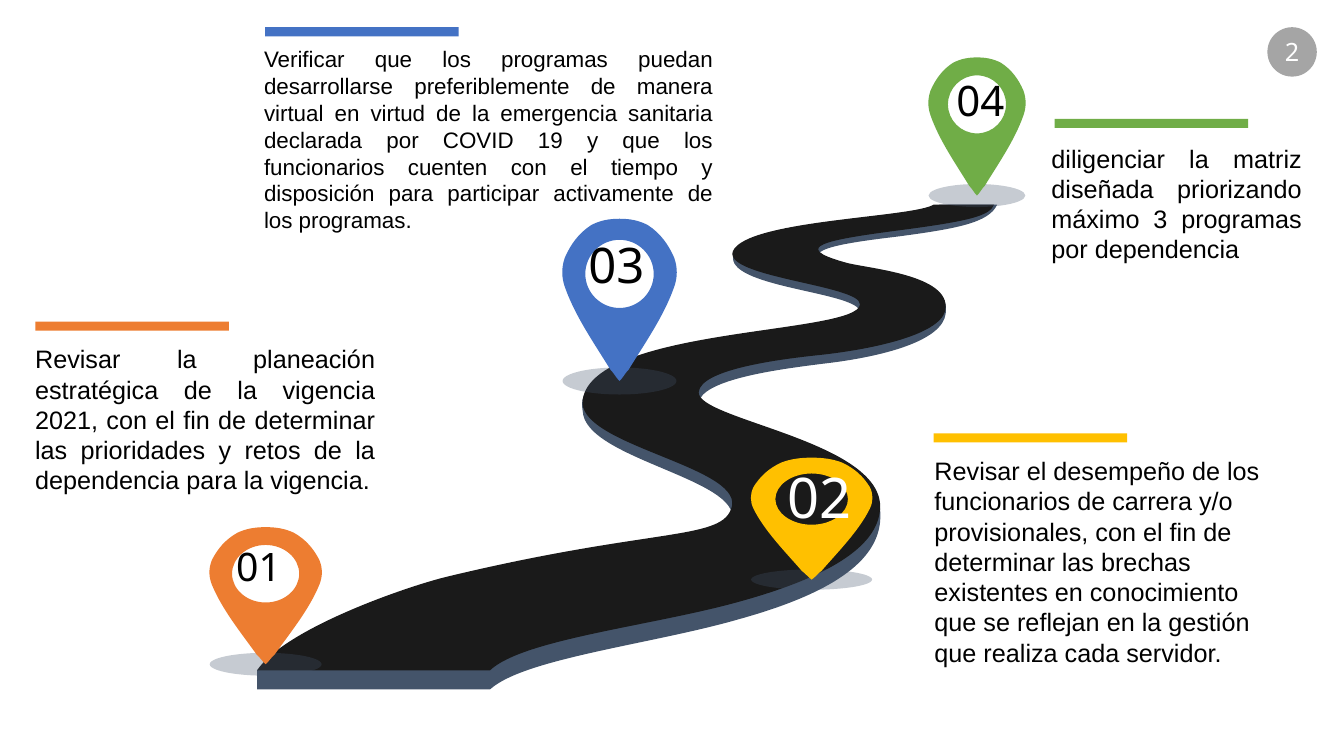
from dataclasses import dataclass

from lxml import etree
from pptx import Presentation
from pptx.dml.color import RGBColor
from pptx.enum.shapes import MSO_SHAPE
from pptx.enum.text import MSO_ANCHOR, MSO_AUTO_SIZE, PP_ALIGN
from pptx.oxml.ns import qn
from pptx.util import Inches, Pt

RECTANGLE, OVAL = MSO_SHAPE.RECTANGLE, MSO_SHAPE.OVAL
LEFT, CENTER, JUSTIFY = PP_ALIGN.LEFT, PP_ALIGN.CENTER, PP_ALIGN.JUSTIFY
MIDDLE = MSO_ANCHOR.MIDDLE
GROW = MSO_AUTO_SIZE.SHAPE_TO_FIT_TEXT
BODY_FONT, NUMBER_FONT = "Arial", "Noto Sans"
BLACK, WHITE, SLATE, ASPHALT, GRAY = "000000", "FFFFFF", "44546A", "1A1A1A", "A5A5A5"
BAR_WIDTH, BAR_HEIGHT = 1.92, 0.09
ARC_CONTROL = 0.55

# Outlines: a start point, then straight ends (x, y) or curves (two controls and an end).
ROAD_SIDE = [
    (4.86, 6.84), (5.2, 6.53, 6.48, 6.39, 7.34, 6.14), (8.38, 5.85, 8.7, 5.51, 8.73, 5.17),
    (8.81, 4.26, 6.91, 4.27, 6.93, 4), (6.95, 3.76, 7.76, 3.66, 8.15, 3.61),
    (8.77, 3.54, 9.35, 3.38, 9.38, 3.11), (9.44, 2.68, 8.55, 2.72, 8.37, 2.67),
    (7.84, 2.51, 8.2, 2.43, 8.88, 2.35), (9.49, 2.27, 9.81, 2.21, 9.89, 2.03),
    (9.32, 2.03), (9.11, 2.25, 7.26, 2.15, 7.27, 2.56), (7.27, 2.86, 8.54, 2.9, 8.53, 3.1),
    (8.52, 3.36, 6.12, 3.29, 5.79, 3.93), (5.77, 3.98, 5.77, 4.02, 5.78, 4.08),
    (5.8, 4.55, 7.35, 4.75, 7.26, 5.16), (7.18, 5.52, 6.52, 5.37, 4.44, 5.89),
    (4.11, 5.97, 2.96, 6.25, 2.55, 6.65), (2.55, 6.84),
]
ROAD_TOP = [
    (4.86, 6.65), (5.19, 6.34, 6.47, 6.21, 7.33, 5.97), (8.38, 5.68, 8.73, 5.35, 8.73, 5.02),
    (8.72, 4.37, 6.91, 4.16, 6.93, 3.89), (6.95, 3.66, 7.76, 3.56, 8.15, 3.52),
    (8.77, 3.45, 9.39, 3.29, 9.38, 3.04), (9.38, 2.71, 8.55, 2.66, 8.37, 2.6),
    (7.84, 2.45, 8.2, 2.38, 8.88, 2.29), (9.65, 2.19, 9.81, 2.14, 9.86, 2.03),
    (9.26, 2.03), (9.05, 2.16, 7.41, 2.18, 7.27, 2.49), (7.16, 2.75, 8.54, 2.83, 8.53, 3.02),
    (8.51, 3.32, 5.9, 3.24, 5.78, 3.96), (5.7, 4.41, 7.34, 4.62, 7.26, 5.02),
    (7.18, 5.37, 6.52, 5.22, 4.44, 5.72), (4.06, 5.81, 2.83, 6.23, 2.55, 6.65),
]
# Right half of a pin, from the top to the tip, in parts of its width and height.
PIN_HALF = [
    (0, 0), (0.09, 0, 0.17, 0.01, 0.25, 0.04), (0.36, 0.09, 0.43, 0.16, 0.48, 0.24),
    (0.51, 0.3, 0.51, 0.36, 0.48, 0.42), (0.39, 0.6, 0.22, 0.77, 0.08, 0.93),
    (0.05, 0.95, 0.03, 0.98, 0, 1),
]
HOLE_CENTER, HOLE_RADIUS_X, HOLE_RADIUS_Y = 0.34, 0.3, 0.21


@dataclass
class Step:
    number: str
    color: str
    pin: tuple
    number_box: tuple
    number_size: int
    number_color: str
    bar: tuple
    text_box: tuple
    text_size: int
    align: PP_ALIGN
    text: str


STEPS = [
    Step("01", "ED7D31", (2.08, 5.23, 1.11, 1.36), (2.05, 5.33, 1.03, 0.57), 28, BLACK,
         (0.35, 3.19), (0.25, 3.36, 3.57, 1.62), 18, JUSTIFY,
         "Revisar la planeación estratégica de la vigencia 2021, con el fin de determinar "
         "las prioridades y retos de la dependencia para la vigencia."),
    Step("02", "FFC000", (7.45, 4.54, 1.2, 1.21), (7.56, 4.54, 1.13, 0.77), 40, WHITE,
         (9.26, 4.3), (9.17, 4.47, 3.47, 2.22), 18, LEFT,
         "Revisar el desempeño de los funcionarios de carrera y/o provisionales, con el fin de "
         "determinar las brechas existentes en conocimiento que se reflejan en la gestión que "
         "realiza cada servidor."),
    Step("03", "4472C4", (5.58, 2.17, 1.13, 1.61), (5.55, 2.28, 1.13, 0.69), 35, BLACK,
         (2.63, 0.27), (2.52, 0.4, 4.65, 1.99), 16, JUSTIFY,
         "Verificar que los programas puedan desarrollarse preferiblemente de manera virtual en "
         "virtud de la emergencia sanitaria declarada por COVID 19 y que los funcionarios cuenten "
         "con el tiempo y disposición para participar activamente de los programas."),
    Step("04", "70AD47", (9.21, 0.57, 0.96, 1.37), (9.16, 0.69, 1.13, 0.61), 30, BLACK,
         (10.46, 1.18), (10.33, 1.37, 2.68, 1.31), 18, JUSTIFY,
         "diligenciar la matriz diseñada priorizando máximo 3 programas por dependencia"),
]


def rgb(color):
    return RGBColor.from_string(color)


def paint(shape, color, alpha=None):
    shape.shadow.inherit = False
    shape.line.fill.background()
    shape.fill.solid()
    shape.fill.fore_color.rgb = rgb(color)
    if alpha is not None:
        tint = shape.fill._xPr.find(qn("a:solidFill"))[0]
        etree.SubElement(tint, qn("a:alpha")).set("val", str(alpha * 1000))


def curve_points(outline):
    """List an outline's points, with two controls before the end of each part."""
    points = [outline[0]]
    for part in outline[1:]:
        if len(part) == 2:
            points += [points[-1], part, part]
        else:
            points += [part[:2], part[2:4], part[4:]]
    return points


def hole_points():
    """List the curve points of a pin's hole, a quarter at a time."""
    x, y = 0, -1
    circle = [(x, y)]
    for _ in range(4):
        bend_x, bend_y = ARC_CONTROL * x, ARC_CONTROL * y
        circle += [(x - bend_y, y + bend_x), (bend_x - y, x + bend_y), (-y, x)]
        x, y = -y, x
    return [(HOLE_RADIUS_X * x, HOLE_CENTER + HOLE_RADIUS_Y * y) for x, y in circle]


def add_outline(page, contours, color):
    """Draw closed curved contours as one shape; inner contours become holes."""
    scaled = [[(Inches(x), Inches(y)) for x, y in contour] for contour in contours]
    builder = page.shapes.build_freeform(*scaled[0][0])
    for index, contour in enumerate(scaled):
        if index:
            builder.move_to(*contour[0])
        builder.add_line_segments(contour[1:], close=True)
    shape = builder.convert_to_shape()
    lines = list(shape._element.iter(qn("a:lnTo")))
    for trio in zip(lines[::3], lines[1::3], lines[2::3]):
        curve = etree.Element(qn("a:cubicBezTo"))
        trio[0].addprevious(curve)
        for line in trio:
            curve.append(line[0])
            line.getparent().remove(line)
    paint(shape, color)


def add_filled(page, kind, box, color, alpha=None):
    shape = page.shapes.add_shape(kind, *map(Inches, box))
    paint(shape, color, alpha)
    return shape


def write(shape, text, align, name, size, color, **frame_format):
    frame = shape.text_frame
    for key, value in frame_format.items():
        setattr(frame, key, value)
    para = frame.paragraphs[0]
    para.alignment = align
    span = para.add_run()
    span.text = text
    for key, value in {"name": name, "size": Pt(size)}.items():
        setattr(span.font, key, value)
    span.font.color.rgb = rgb(color)


def add_label(page, box, *content):
    label = page.shapes.add_textbox(*map(Inches, box))
    write(label, *content, word_wrap=True, auto_size=GROW)


def add_pin(page, box, color):
    left, top, width, height = box
    shade = height / 6
    add_filled(page, OVAL, (left, top + height - shade / 2, width, shade), SLATE, 30)
    right_side = curve_points(PIN_HALF)
    left_side = [(-x, y) for x, y in reversed(right_side[:-1])]
    add_outline(page, [[(left + width * (0.5 + x), top + height * y) for x, y in contour]
                       for contour in (right_side + left_side, hole_points())], color)


def add_step(page, step):
    add_pin(page, step.pin, step.color)
    add_label(page, step.number_box, step.number, CENTER, NUMBER_FONT,
              step.number_size, step.number_color)
    add_label(page, step.text_box, step.text, step.align, BODY_FONT, step.text_size, BLACK)
    add_filled(page, RECTANGLE, (*step.bar, BAR_WIDTH, BAR_HEIGHT), step.color)


def add_page_number(page, box, number):
    badge = add_filled(page, OVAL, box, GRAY)
    write(badge, number, CENTER, NUMBER_FONT, 18, WHITE, word_wrap=False, vertical_anchor=MIDDLE)


def main():
    deck = Presentation()
    deck.slide_width, deck.slide_height = Inches(13.33), Inches(7.5)
    page = deck.slides.add_slide(deck.slide_layouts[6])
    for outline, color in ((ROAD_SIDE, SLATE), (ROAD_TOP, ASPHALT)):
        add_outline(page, [curve_points(outline)], color)
    for step in STEPS:
        add_step(page, step)
    add_page_number(page, (12.57, 0.27, 0.49, 0.49), "2")
    deck.save("out.pptx")


if __name__ == "__main__":
    main()
